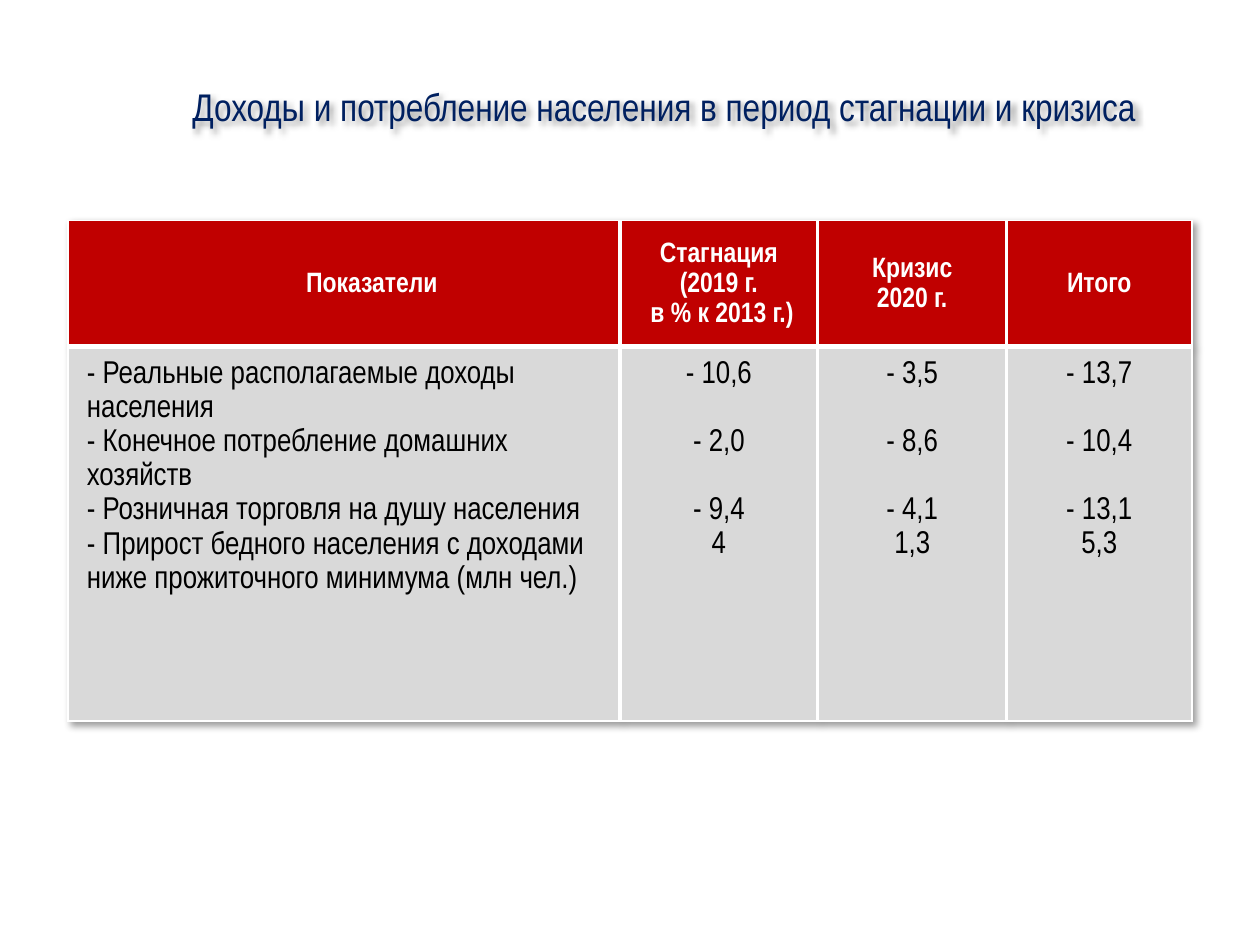
import pptx
import pptx.util
import pptx.dml.color
import pptx.enum.text
import pptx.oxml
import pptx.oxml.ns

Pt = pptx.util.Pt
RGB = pptx.dml.color.RGBColor.from_string
ALIGN = pptx.enum.text.PP_ALIGN
ANCHOR = pptx.enum.text.MSO_ANCHOR
NS = pptx.oxml.ns.nsdecls("a")
FONT = "Arial Narrow"
COLORS = {"title": "002060", "header": "C00000", "header_text": "FFFFFF",
          "body": "D9D9D9", "body_text": "000000", "border": "FFFFFF"}


def add_shadow(parent):
    parent.append(pptx.oxml.parse_xml(
        f'<a:effectLst {NS}><a:outerShdw blurRad="50800" dist="38100" dir="2700000" '
        'algn="tl" rotWithShape="0"><a:srgbClr val="000000"><a:alpha val="40000"/>'
        '</a:srgbClr></a:outerShdw></a:effectLst>'))


def format_text(p, size, color, bold, align, spacing):
    p.alignment = align
    p.line_spacing = spacing
    for r in p.runs:
        r.font.name = FONT
        r.font.size = Pt(size)
        r.font.bold = bold
        r.font.color.rgb = RGB(color)


prs = pptx.Presentation()
prs.slide_width, prs.slide_height = Pt(720), Pt(540)
s = prs.slides.add_slide(prs.slide_layouts[5])

# Title
sp = s.shapes.title
sp.left, sp.top, sp.width, sp.height = Pt(36), Pt(28), Pt(651.6), Pt(89.3)
tf = sp.text_frame
tf.text = "Доходы и потребление населения в период стагнации и кризиса"
tf.word_wrap = True
tf.vertical_anchor = ANCHOR.MIDDLE
tf.margin_bottom = Pt(24)
p = tf.paragraphs[0]
format_text(p, 22, COLORS["title"], False, ALIGN.CENTER, 0.9)
p._p.get_or_add_pPr().set("indent", str(Pt(35.4)))
sp.fill.background()
add_shadow(sp._element.spPr)

# Table content: one list of paragraphs per cell
rows = [
    [["Показатели "],
     ["Стагнация", "(2019 г.", " в % к 2013 г.)"],
     ["Кризис", "2020 г."],
     ["Итого"]],
    [["- Реальные располагаемые доходы населения",
      "- Конечное потребление домашних хозяйств",
      "- Розничная торговля на душу населения",
      "- Прирост бедного населения с доходами ниже прожиточного минимума (млн чел.)"],
     ["- 10,6", "- 2,0", "- 9,4", "4"],
     ["- 3,5", "- 8,6", "- 4,1", "1,3"],
     ["- 13,7", "- 10,4", "- 13,1", "5,3"]],
]
col_widths = [315.4, 113, 108, 105.8]
row_heights = [72, 214]

# Table frame
table = s.shapes.add_table(2, 4, Pt(38.9), Pt(126), Pt(sum(col_widths)),
                           Pt(sum(row_heights))).table
table.horz_banding = False
for col, width in zip(table.columns, col_widths):
    col.width = Pt(width)
for row, height in zip(table.rows, row_heights):
    row.height = Pt(height)
tbl_pr = table._tbl.tblPr
add_shadow(tbl_pr)
tbl_pr.insert(0, tbl_pr[-1])

# Cells
for i, row in enumerate(rows):
    header = i == 0
    kind = "header" if header else "body"
    for j, lines in enumerate(row):
        cell = table.cell(i, j)
        cell.margin_left = cell.margin_right = Pt(10.8)
        cell.margin_top = cell.margin_bottom = Pt(5.76)
        cell.vertical_anchor = ANCHOR.MIDDLE if header else ANCHOR.TOP
        tf = cell.text_frame
        tf.text = "\n".join(lines)
        for k, p in enumerate(tf.paragraphs):
            align = ALIGN.CENTER if header or j else ALIGN.LEFT
            format_text(p, 16 if header else 18, COLORS[kind + "_text"],
                        header, align, 1.15)
            # Values skip the second line of the two-line indicators
            if not header and j and k in (1, 2):
                p.space_before = Pt(19.4)

        # Borders: wide between columns and under the header
        tc_pr = cell._tc.get_or_add_tcPr()
        borders = {"lnL": 2.25 if j else 1, "lnR": 2.25 if j < 3 else 1,
                   "lnT": 1 if header else 3, "lnB": 3 if header else 1}
        for tag, width in borders.items():
            tc_pr.append(pptx.oxml.parse_xml(
                f'<a:{tag} {NS} w="{Pt(width)}"><a:solidFill><a:srgbClr '
                f'val="{COLORS["border"]}"/></a:solidFill></a:{tag}>'))
        cell.fill.solid()
        cell.fill.fore_color.rgb = RGB(COLORS[kind])

p = table.cell(0, 0).text_frame.paragraphs[0]
p._p.get_or_add_pPr().set("indent", str(Pt(35.4)))

prs.save("out.pptx")
